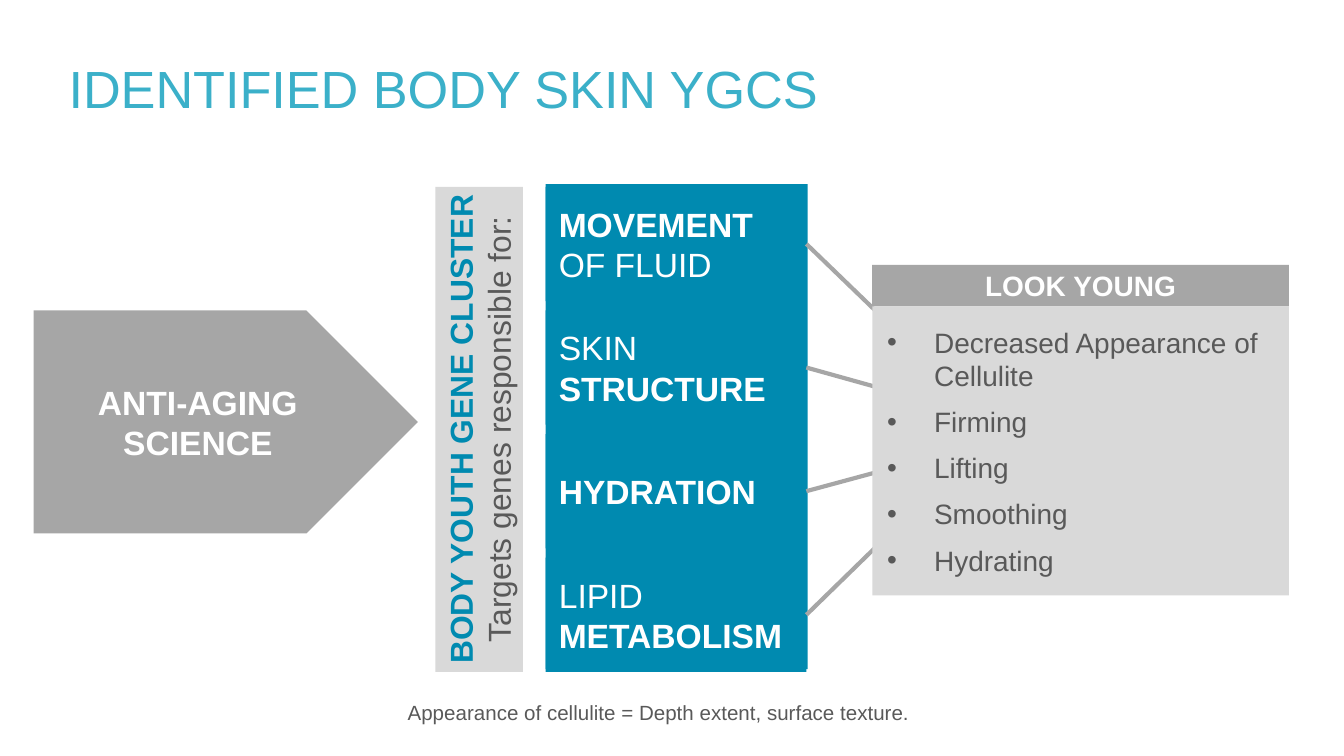
from lxml import etree
from pptx import Presentation
from pptx.dml.color import RGBColor
from pptx.enum.shapes import MSO_CONNECTOR, MSO_SHAPE
from pptx.enum.text import MSO_ANCHOR, MSO_AUTO_SIZE, PP_ALIGN
from pptx.oxml.ns import qn
from pptx.util import Inches, Pt

RECTANGLE = MSO_SHAPE.RECTANGLE
PENTAGON = MSO_SHAPE.PENTAGON
STRAIGHT = MSO_CONNECTOR.STRAIGHT
MIDDLE, TOP = MSO_ANCHOR.MIDDLE, MSO_ANCHOR.TOP
LEFT, CENTER, RIGHT = PP_ALIGN.LEFT, PP_ALIGN.CENTER, PP_ALIGN.RIGHT
NO_AUTOFIT = MSO_AUTO_SIZE.NONE
FIT_SHAPE = MSO_AUTO_SIZE.SHAPE_TO_FIT_TEXT

FONT = "Arial"
COLORS = {
    "title": "3BB0C9",
    "teal": "008AB0",
    "gray": "A6A6A6",
    "pale": "D9D9D9",
    "text": "595959",
    "white": "FFFFFF",
}
SLIDE_WIDTH = 10
SLIDE_HEIGHT = SLIDE_WIDTH * 9 / 16
CARD_LEFT, CARD_TOP, CARD_PITCH = 4.06, 1.39, 0.92
CARD_WIDTH, CARD_HEIGHT = 1.94, 0.85
RIGHT_SIDE = 3

TARGETS = [
    [[("MOVEMENT", True)], [("OF FLUID", False)]],
    [[("SKIN", False)], [("STRUCTURE", True)]],
    [[("HYDRATION", True)]],
    [[("LIPID ", False), ("METABOLISM", True)]],
]
LINE_ENDS = [(7.9, 3.65), (8.6, 3.46), (7.57, 3.23), (7.45, 3.16)]
BENEFITS = ["Decreased Appearance of Cellulite", "Firming", "Lifting",
            "Smoothing", "Hydrating"]


def rgb(name):
    """Return the named palette colour."""
    return RGBColor.from_string(COLORS[name])


def place(shape, left, top, width, height):
    """Set position and size in inches."""
    shape.left, shape.top = Inches(left), Inches(top)
    shape.width, shape.height = Inches(width), Inches(height)


def prepare_frame(frame, anchor=MIDDLE, inset=(0.11, 0.06)):
    """Set wrapping, anchoring and margins of a text frame."""
    frame.word_wrap = True
    frame.auto_size = NO_AUTOFIT
    frame.vertical_anchor = anchor
    frame.margin_left = frame.margin_right = Inches(inset[0])
    frame.margin_top = frame.margin_bottom = Inches(inset[1])


def write(frame, paragraphs, size, align=LEFT, after=0):
    """Write paragraphs given as lists of (text, bold, colour) runs."""
    for index, pieces in enumerate(paragraphs):
        paragraph = frame.add_paragraph() if index else frame.paragraphs[0]
        paragraph.alignment = align
        paragraph.space_before = Pt(0)
        paragraph.space_after = Pt(after)
        for text, bold, color in pieces:
            run = paragraph.add_run()
            run.text = text
            run.font.name = FONT
            run.font.size = Pt(size)
            run.font.bold = bold
            run.font.color.rgb = rgb(color)


def add_block(slide, box, fill, kind=RECTANGLE):
    """Add a flat filled shape without an outline."""
    block = slide.shapes.add_shape(kind, *map(Inches, box))
    block.shadow.inherit = False
    block.fill.solid()
    block.fill.fore_color.rgb = rgb(fill)
    block.line.fill.background()
    return block


def add_label(slide, box, fill, paragraphs, size, kind=RECTANGLE, after=0):
    """Add a filled shape with centred text."""
    label = add_block(slide, box, fill, kind)
    prepare_frame(label.text_frame)
    write(label.text_frame, paragraphs, size, CENTER, after)
    return label


def add_card(slide, row, lines):
    """Add one gene target card to the teal column."""
    box = (CARD_LEFT, CARD_TOP + row * CARD_PITCH, CARD_WIDTH, CARD_HEIGHT)
    card = add_block(slide, box, "teal")
    prepare_frame(card.text_frame, inset=(0.1, 0.05))
    write(card.text_frame,
          [[(text, bold, "white") for text, bold in line] for line in lines], 18)
    return card


def add_link(slide, card, end):
    """Draw a line from a card's right side towards the benefits."""
    x, y = map(Inches, end)
    link = slide.shapes.add_connector(STRAIGHT, x, y, x, y)
    link.begin_connect(card, RIGHT_SIDE)
    link.line.color.rgb = rgb("gray")
    link.line.width = Pt(2.25)
    etree.SubElement(link._element.spPr, qn("a:effectLst"))


def fill_title(title):
    """Place and write the slide title."""
    place(title, 0.4, 0.19, 8.93, 0.92)
    prepare_frame(title.text_frame)
    write(title.text_frame,
          [[("IDENTIFIED BODY SKIN YGCS", False, "title")]], 28)


def fill_benefits(slide, benefits):
    """Place the benefit list in front of the lines and write its bullets."""
    slide.shapes._spTree.append(benefits._element)
    place(benefits, 6.49, 2.28, 3.1, 2.15)
    benefits.fill.solid()
    benefits.fill.fore_color.rgb = rgb("pale")
    prepare_frame(benefits.text_frame)
    write(benefits.text_frame,
          [[(benefit, False, "text")] for benefit in BENEFITS], 15, after=6.7)
    for paragraph in benefits.text_frame.paragraphs:
        properties = paragraph._p.get_or_add_pPr()
        properties.set("marL", str(Inches(0.35)))
        properties.set("indent", str(-Inches(0.35)))
        etree.SubElement(properties, qn("a:buFont"), typeface=FONT)
        etree.SubElement(properties, qn("a:buChar"), char="•")


def add_footnote(slide):
    """Add the right-aligned footnote."""
    note = slide.shapes.add_textbox(*map(Inches, (2.81, 5.15, 4.07, 0.3)))
    prepare_frame(note.text_frame, TOP)
    note.text_frame.auto_size = FIT_SHAPE
    write(note.text_frame,
          [[("Appearance of cellulite = Depth extent, surface texture.",
             False, "text")]], 11, RIGHT)


def main():
    """Build the slide and save it."""
    deck = Presentation()
    deck.slide_width = Inches(SLIDE_WIDTH)
    deck.slide_height = Inches(SLIDE_HEIGHT)
    slide = deck.slides.add_slide(deck.slide_layouts[1])
    fill_title(slide.shapes.title)

    add_block(slide, (CARD_LEFT, 1.37, 1.95, 3.61), "teal")
    cards = [add_card(slide, row, lines) for row, lines in enumerate(TARGETS)]
    for card, end in zip(cards, LINE_ENDS):
        add_link(slide, card, end)

    add_label(slide, (6.49, 1.97, 3.1, 0.31), "gray",
              [[("LOOK YOUNG", True, "white")]], 15, after=6.7)
    fill_benefits(slide, slide.placeholders[1])
    add_footnote(slide)

    cluster = add_label(slide, (3.24, CARD_TOP, 0.65, 3.61), "pale",
                        [[("BODY YOUTH GENE CLUSTER", True, "teal")],
                         [("Targets genes responsible for:", False, "text")]], 17)
    cluster.text_frame._txBody.bodyPr.set("vert", "vert270")
    add_label(slide, (0.25, 2.31, 2.86, 1.66), "gray",
              [[("ANTI-AGING", True, "white")], [("SCIENCE", True, "white")]],
              18, PENTAGON)
    deck.save("out.pptx")


if __name__ == "__main__":
    main()
